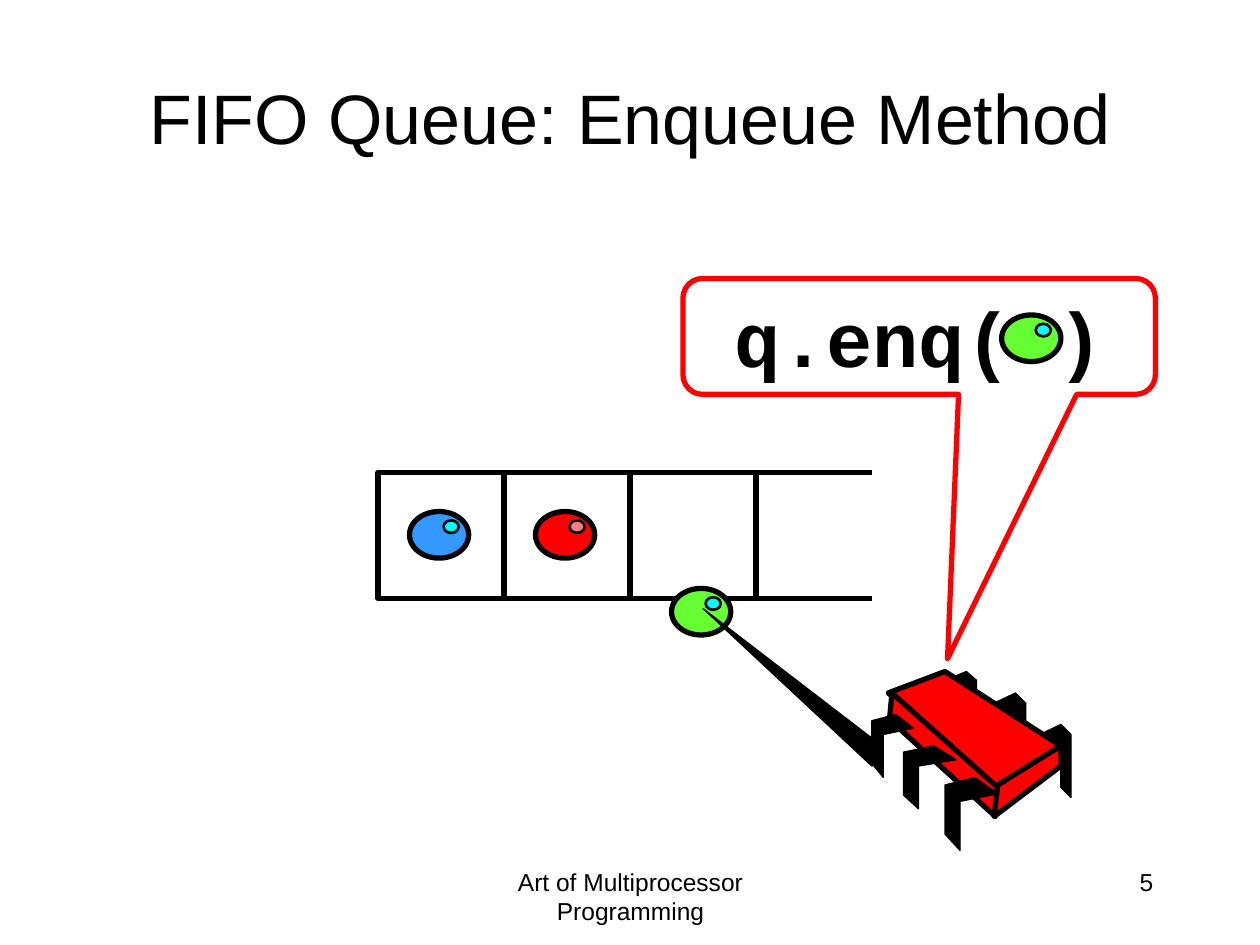
from dataclasses import dataclass
from typing import Optional

from lxml.etree import SubElement
from pptx import Presentation
from pptx.dml.color import RGBColor
from pptx.enum.shapes import MSO_CONNECTOR, MSO_SHAPE
from pptx.enum.text import MSO_ANCHOR, PP_ALIGN
from pptx.oxml.ns import qn
from pptx.util import Pt

PX = 9144
BLACK, RED, GREEN, BLUE = "000000", "FF0000", "66FF33", "3399FF"
CYAN, PINK = "00FFFF", "FF7C80"
THICK, MEDIUM, THIN = 3, 1.5, 0.75

Points = list[tuple[int, int]]


@dataclass
class Label:
    text: str
    box: tuple[int, int, int, int]
    size: int
    align: PP_ALIGN
    anchor: MSO_ANCHOR = MSO_ANCHOR.TOP


@dataclass
class Bead:
    left: int
    top: int
    body: str
    glint: str


@dataclass
class Leg:
    left: int
    top: int
    width: int
    height: int


@dataclass
class Face:
    corners: Points


LABELS = [
    Label("Art of Multiprocessor Programming", (342, 683, 317, 50), 14, PP_ALIGN.CENTER),
    Label("5", (717, 683, 208, 50), 14, PP_ALIGN.RIGHT),
    Label("FIFO Queue: Enqueue Method", (50, 30, 900, 125), 40, PP_ALIGN.CENTER,
          MSO_ANCHOR.MIDDLE),
]

FAR_PROFILE = [(0, 8), (17, 0), (25, 8), (25, 58), (17, 50), (17, 17), (0, 25)]
NEAR_PROFILE = [(24, 0), (42, 13), (12, 19), (12, 58), (0, 45), (0, 6)]
FAR_LEGS = [Leg(825, 575, 25, 58), Leg(789, 550, 25, 58), Leg(750, 533, 25, 50)]
NEAR_LEGS = [Leg(750, 617, 42, 58), Leg(717, 592, 42, 50), Leg(692, 567, 33, 50)]
CHIP_FACES = [
    Face([(750, 533), (842, 592), (790, 626), (705, 550)]),
    Face([(708, 550), (792, 625), (790, 648), (706, 571)]),
    Face([(842, 592), (842, 608), (789, 648), (792, 623)]),
]
ARM = [(692, 608), (700, 592), (558, 483)]

CELL, QUEUE_LEFT, QUEUE_TOP, CELL_COUNT = 100, 300, 375, 3
OPEN_LEFT = 592


def rgb(value: str) -> RGBColor:
    return RGBColor.from_string(value)


def emu(*lengths: int) -> list[int]:
    return [length * PX for length in lengths]


def paint(shape, fill: Optional[str], line: str, weight: float) -> None:
    shape.shadow.inherit = False
    if fill is None:
        shape.fill.background()
    else:
        shape.fill.solid()
        shape.fill.fore_color.rgb = rgb(fill)
    shape.line.color.rgb = rgb(line)
    shape.line.width = Pt(weight)


def write(frame, text: str, size: int, font_name: str, align: PP_ALIGN,
          anchor: MSO_ANCHOR, bold: bool = False) -> None:
    frame.word_wrap = True
    frame.vertical_anchor = anchor
    frame.text = text
    paragraph = frame.paragraphs[0]
    paragraph.alignment = align
    font = paragraph.runs[0].font
    font.name, font.size, font.bold = font_name, Pt(size), bold
    font.color.rgb = rgb(BLACK)


def draw_label(shapes, label: Label) -> None:
    frame = shapes.add_textbox(*emu(*label.box)).text_frame
    write(frame, label.text, label.size, "Arial", label.align, label.anchor)


def draw_bead(shapes, bead: Bead) -> None:
    group = shapes.add_group_shape().shapes
    body = group.add_shape(MSO_SHAPE.OVAL, *emu(bead.left, bead.top, 47, 37))
    paint(body, bead.body, BLACK, THICK)
    glint = group.add_shape(MSO_SHAPE.OVAL, *emu(bead.left + 27, bead.top + 7, 12, 10))
    paint(glint, bead.glint, BLACK, MEDIUM)


def draw_polygon(shapes, corners: Points, fill: str, weight: float) -> None:
    builder = shapes.build_freeform(*corners[0], scale=PX)
    builder.add_line_segments(corners[1:], close=True)
    paint(builder.convert_to_shape(), fill, BLACK, weight)


def draw_leg(shapes, leg: Leg, profile: Points) -> None:
    full_width = max(x for x, _ in profile)
    full_height = max(y for _, y in profile)
    corners = [(leg.left + round(x * leg.width / full_width),
                leg.top + round(y * leg.height / full_height)) for x, y in profile]
    draw_polygon(shapes, corners, BLACK, THIN)


def draw_chip(shapes) -> None:
    group = shapes.add_group_shape().shapes
    for leg in FAR_LEGS:
        draw_leg(group, leg, FAR_PROFILE)
    for face in CHIP_FACES:
        draw_polygon(group, face.corners, RED, THICK)
    for leg in NEAR_LEGS:
        draw_leg(group, leg, NEAR_PROFILE)


def draw_queue(shapes) -> None:
    for index in range(CELL_COUNT):
        cell = shapes.add_shape(
            MSO_SHAPE.RECTANGLE, *emu(QUEUE_LEFT + index * CELL, QUEUE_TOP, CELL, CELL))
        paint(cell, None, BLACK, THICK)
    for y in (QUEUE_TOP, QUEUE_TOP + CELL):
        edge = shapes.add_connector(
            MSO_CONNECTOR.STRAIGHT, *emu(OPEN_LEFT, y, OPEN_LEFT + CELL, y))
        edge.line.color.rgb = rgb(BLACK)
        edge.line.width = Pt(THICK)
        SubElement(edge._element.spPr, qn("a:effectLst"))


def draw_call(shapes) -> None:
    callout = shapes.add_shape(
        MSO_SHAPE.ROUNDED_RECTANGULAR_CALLOUT, *emu(542, 221, 375, 92))
    for index, value in enumerate((0.06, 2.78, 0.17)):
        callout.adjustments[index] = value
    paint(callout, None, RED, THICK)
    write(callout.text_frame, "q.enq( )", 44, "Courier New", PP_ALIGN.CENTER,
          MSO_ANCHOR.MIDDLE, bold=True)


def main() -> None:
    presentation = Presentation()
    presentation.slide_width, presentation.slide_height = emu(1000, 750)
    shapes = presentation.slides.add_slide(presentation.slide_layouts[6]).shapes

    for label in LABELS:
        draw_label(shapes, label)
    draw_bead(shapes, Bead(325, 406, BLUE, CYAN))
    draw_queue(shapes)
    draw_bead(shapes, Bead(533, 467, GREEN, CYAN))
    draw_bead(shapes, Bead(425, 406, RED, PINK))
    draw_chip(shapes)
    draw_polygon(shapes, ARM, BLACK, THIN)
    draw_call(shapes)
    draw_bead(shapes, Bead(795, 250, GREEN, CYAN))

    presentation.save("out.pptx")


if __name__ == "__main__":
    main()
